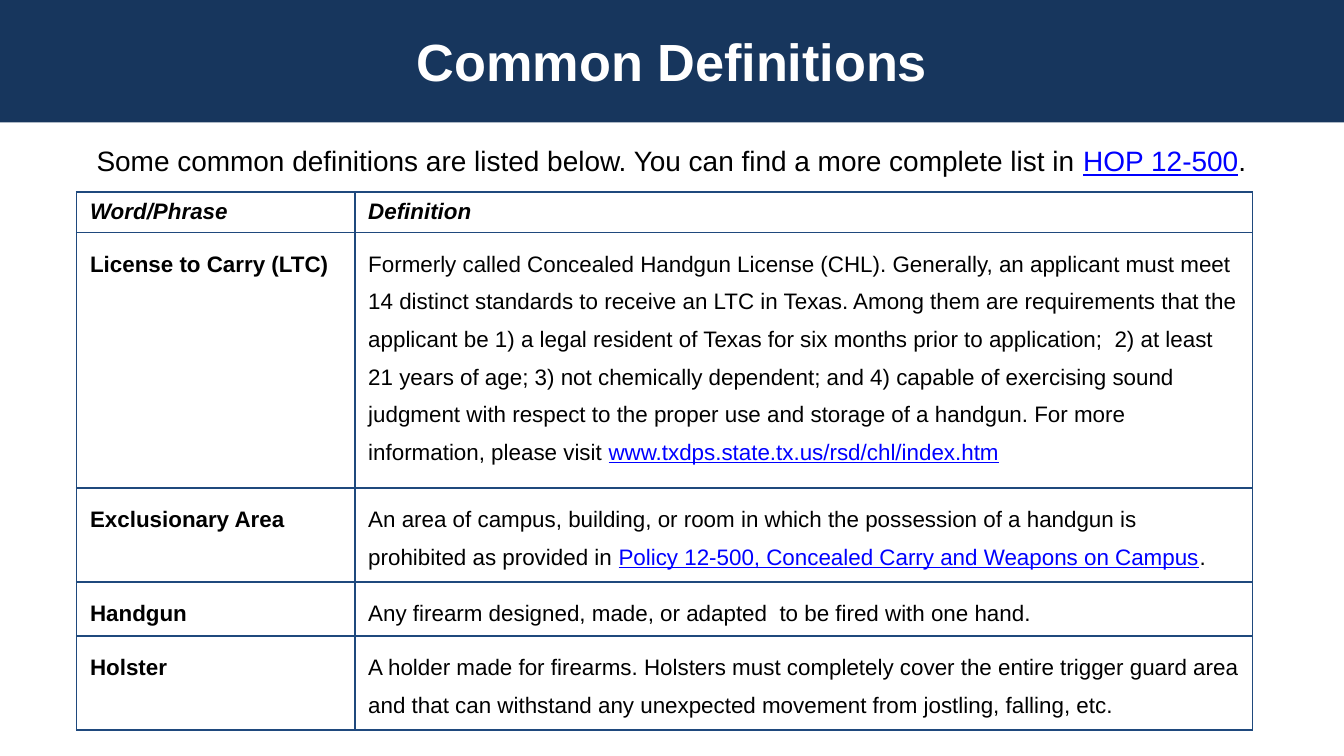
from lxml.etree import SubElement
from pptx import Presentation
from pptx.dml.color import RGBColor
from pptx.enum.shapes import MSO_SHAPE
from pptx.enum.text import MSO_ANCHOR, PP_ALIGN
from pptx.oxml.ns import qn
from pptx.util import Inches, Pt

HUES = {"navy": "17365D", "line": "1F497D", "link": "0000FF",
        "text": "000000", "white": "FFFFFF"}


def write(par, parts, size, hue="text", bold=False):
    """Fill a paragraph; every second part looks like a link."""
    font = par.font
    font.name, font.size, font.bold = "Arial", Pt(size), bold
    font.color.rgb = RGBColor.from_string(HUES[hue])
    for i, part in enumerate(parts):
        run = par.add_run()
        run.text = part
        if i % 2:
            run.font.underline = True
            run.font.color.rgb = RGBColor.from_string(HUES["link"])


def edge(cell):
    """Draw a thin line on all four sides of a cell."""
    props = cell._tc.get_or_add_tcPr()
    for side in ("lnL", "lnR", "lnT", "lnB"):
        line = SubElement(props, qn(f"a:{side}"), w=str(Pt(1)))
        fill = SubElement(line, qn("a:solidFill"))
        SubElement(fill, qn("a:srgbClr"), val=HUES["line"])


# Widescreen slide, 16 to 9
deck = Presentation()
deck.slide_width, deck.slide_height = Inches(10), Inches(10 * 9 / 16)
slide = deck.slides.add_slide(deck.slide_layouts[6])

# Title band
band = slide.shapes.add_shape(MSO_SHAPE.RECTANGLE, Inches(0), Inches(-0.01),
                              Inches(10), Inches(0.92))
band.shadow.inherit = False
band.fill.solid()
band.fill.fore_color.rgb = RGBColor.from_string(HUES["navy"])
band.line.fill.background()
band.text_frame.vertical_anchor = MSO_ANCHOR.MIDDLE
title = band.text_frame.paragraphs[0]
title.alignment = PP_ALIGN.CENTER
write(title, ["Common Definitions"], 28, "white", True)

# Lead sentence
lead = slide.shapes.add_textbox(Inches(0.62), Inches(0.95),
                                Inches(8.94), Inches(0.49)).text_frame
lead.word_wrap = True
lead.vertical_anchor = MSO_ANCHOR.MIDDLE
write(lead.paragraphs[0],
      ["Some common definitions are listed below. "
       "You can find a more complete list in ", "HOP 12-500", "."], 15)

# Terms: least row height, word, parts of the definition
terms = [
    (0.27, "Word/Phrase", ["Definition"]),
    (1.49, "License to Carry (LTC)", [
        "Formerly called Concealed Handgun License (CHL). Generally, an "
        "applicant must meet 14 distinct standards to receive an LTC in Texas. "
        "Among them are requirements that the applicant be 1) a legal resident "
        "of Texas for six months prior to application;  2) at least 21 years of "
        "age; 3) not chemically dependent; and 4) capable of exercising sound "
        "judgment with respect to the proper use and storage of a handgun. For "
        "more information, please visit ",
        "www.txdps.state.tx.us/rsd/chl/index.htm"]),
    (0.68, "Exclusionary Area", [
        "An area of campus, building, or room in which the possession of a "
        "handgun is prohibited as provided in ",
        "Policy 12-500, Concealed Carry and Weapons on Campus", "."]),
    (0.27, "Handgun", [
        "Any firearm designed, made, or adapted  to be fired with one hand."]),
    (0.68, "Holster", [
        "A holder made for firearms. Holsters must completely cover the entire "
        "trigger guard area and that can withstand any unexpected movement from "
        "jostling, falling, etc."]),
]

# Table of definitions
table = slide.shapes.add_table(len(terms), 2, Inches(0.57), Inches(1.43),
                               Inches(8.75), Inches(3.28)).table
table.first_row = table.horz_banding = False
for col, wide in zip(table.columns, (2.07, 6.68)):
    col.width = Inches(wide)
for r, (high, word, parts) in enumerate(terms):
    table.rows[r].height = Inches(high)
    for c, texts in enumerate(([word], parts)):
        cell = table.cell(r, c)
        cell.margin_right = Inches(0.09)
        edge(cell)
        cell.fill.background()
        par = cell.text_frame.paragraphs[0]
        write(par, texts, 12, bold=r == 0 or c == 0)
        if r == 0:
            par.font.italic = True
        else:
            par.line_spacing = 1.5

deck.save("out.pptx")
